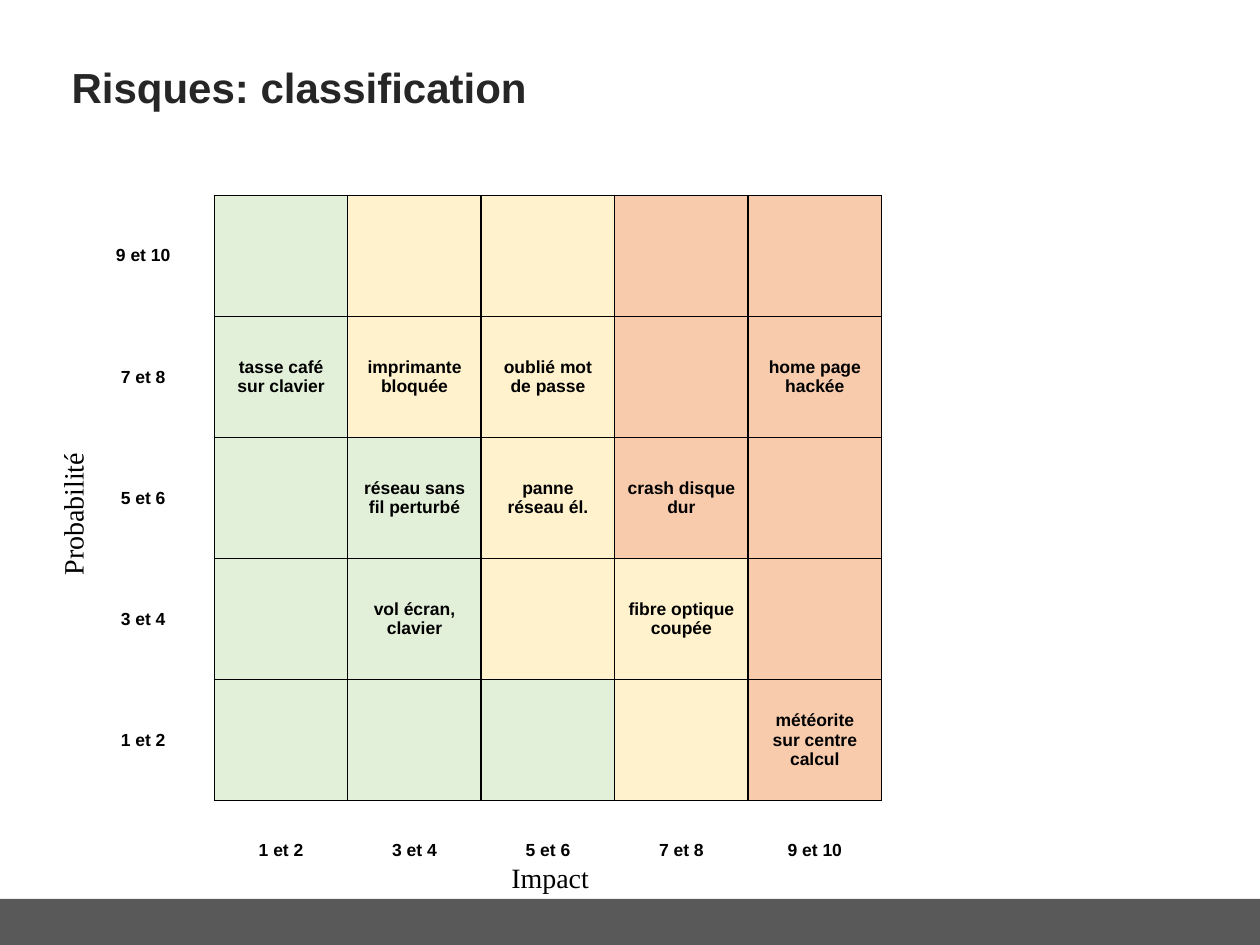
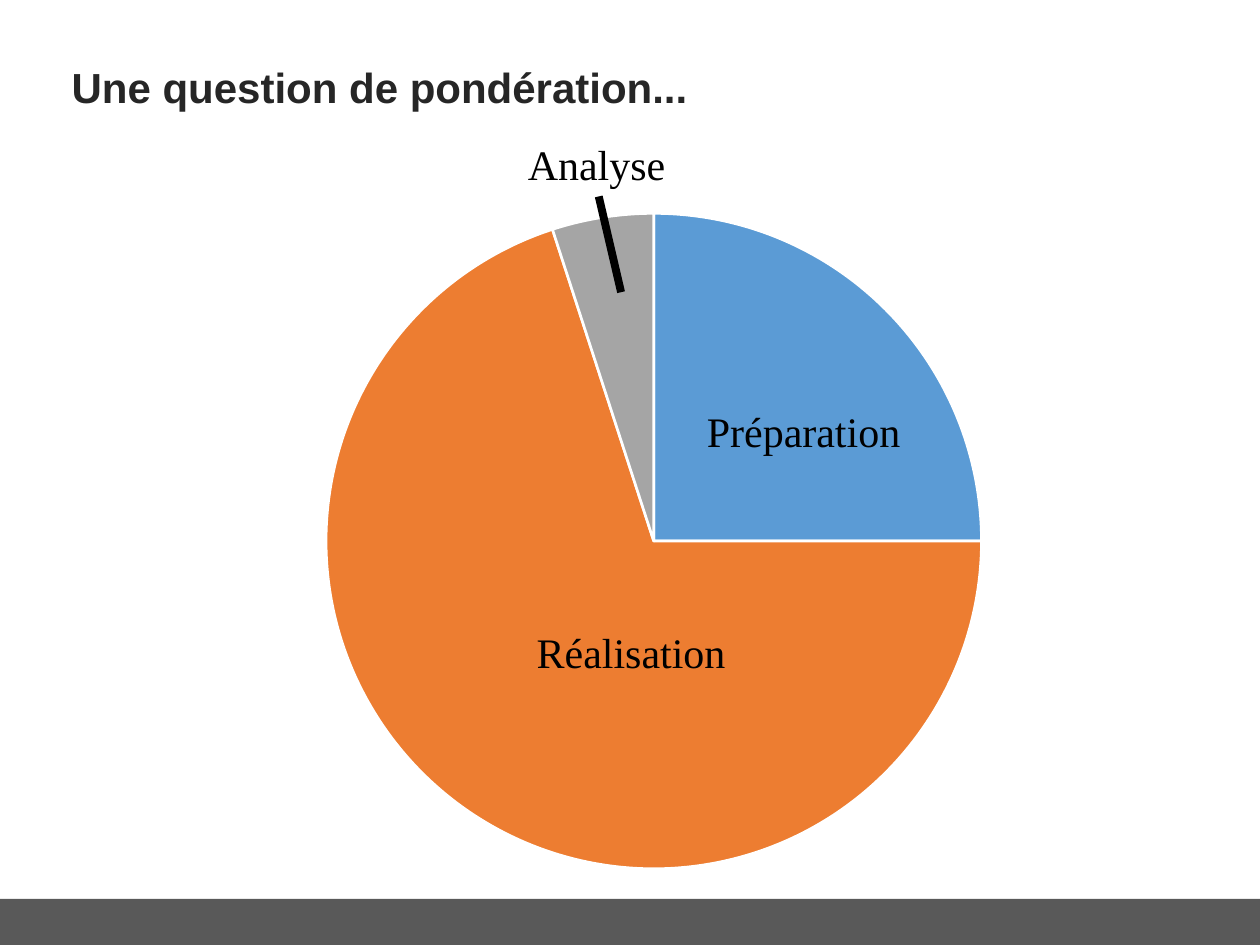
from lxml.etree import SubElement
from pptx import Presentation
from pptx.chart.data import CategoryChartData
from pptx.dml.color import RGBColor
from pptx.enum.chart import XL_CHART_TYPE as ChartType
from pptx.enum.shapes import MSO_CONNECTOR as Connector, MSO_SHAPE as Shape
from pptx.enum.text import MSO_ANCHOR as Anchor, MSO_AUTO_SIZE as AutoSize, PP_ALIGN as Align
from pptx.oxml import parse_xml
from pptx.oxml.ns import nsdecls, qn
from pptx.util import Cm, Pt

BLACK = RGBColor(0x00, 0x00, 0x00)
WHITE = RGBColor(0xFF, 0xFF, 0xFF)
TITLE = RGBColor(0x26, 0x26, 0x26)
BAND = RGBColor(0x59, 0x59, 0x59)
GREEN = RGBColor(0xE2, 0xF0, 0xD9)
YELLOW = RGBColor(0xFF, 0xF2, 0xCC)
RED = RGBColor(0xF8, 0xCB, 0xAD)
BLUE = RGBColor(0x5B, 0x9B, 0xD5)
ORANGE = RGBColor(0xED, 0x7D, 0x31)
GREY = RGBColor(0xA5, 0xA5, 0xA5)
SANS, SERIF = "Arial", "Times New Roman"
PLAIN_TABLE = "{2D5ABB26-0587-4C30-8999-92F81FD0307C}"

LEVELS = ["1 et 2", "3 et 4", "5 et 6", "7 et 8", "9 et 10"]
SEVERITY = {"G": GREEN, "Y": YELLOW, "R": RED}
RISK_ZONES = ["GYYRR", "GYYRR", "GGYRR", "GGYYR", "GGGYR"]
RISKS = {
    (1, 0): "tasse café sur clavier",
    (1, 1): "imprimante bloquée",
    (1, 2): "oublié mot de passe",
    (1, 4): "home page hackée",
    (2, 1): "réseau sans fil perturbé",
    (2, 2): "panne réseau él.",
    (2, 3): "crash disque dur",
    (3, 1): "vol écran, clavier",
    (3, 3): "fibre optique coupée",
    (4, 4): "météorite sur centre calcul",
}
AXIS_LABELS = [
    ("Impact", 10.06, 17.22, 2.08, 0),
    ("Probabilité", -0.03, 9.88, 3.0, 270),
]

SLICES = [(25, BLUE), (70, ORANGE), (5, GREY)]
SLICE_LABELS = [
    ("Préparation", 14.0, 8.05, 4.45),
    ("Réalisation", 10.57, 12.5, 4.34),
    ("Analyse", 10.39, 2.67, 3.3),
]
CHART_W, CHART_H, PIE_D = 19.02, 13.94, 13.22


def add_run(p, text, size, font, color=BLACK, bold=False):
    r = p.add_run()
    r.text = text
    r.font.size, r.font.name, r.font.bold = Pt(size), font, bold
    r.font.color.rgb = color


def add_slide(prs, title):
    s = prs.slides.add_slide(prs.slide_layouts[5])
    band = s.shapes.add_shape(Shape.RECTANGLE, 0, Cm(18.12), prs.slide_width, Cm(0.93))
    band.shadow.inherit = False
    band.fill.solid()
    band.fill.fore_color.rgb = BAND
    band.line.fill.background()
    sp = s.shapes.title
    sp.left, sp.top, sp.width, sp.height = Cm(1.19), Cm(1.04), Cm(21.51), Cm(1.42)
    tf = sp.text_frame
    tf.vertical_anchor = Anchor.MIDDLE
    tf.auto_size = AutoSize.NONE
    p = tf.paragraphs[0]
    p.alignment = Align.LEFT
    add_run(p, title, 24, SANS, TITLE, True)
    return s


def add_label(s, text, left, top, width, height, size, rotation=0):
    sp = s.shapes.add_textbox(Cm(left), Cm(top), Cm(width), Cm(height))
    sp.rotation = rotation
    tf = sp.text_frame
    tf.word_wrap = False
    tf.auto_size = AutoSize.SHAPE_TO_FIT_TEXT
    add_run(tf.paragraphs[0], text, size, SERIF)


def set_borders(cell, sides):
    tc_pr = cell._tc.get_or_add_tcPr()
    for side in sides:
        ln = SubElement(tc_pr, qn(f"a:ln{side}"), w=str(Pt(1)))
        fill = SubElement(ln, qn("a:solidFill"))
        SubElement(fill, qn("a:srgbClr"), val=str(BLACK))


def fill_cell(cell, text, borders="", color=None, anchor=Anchor.MIDDLE):
    set_borders(cell, borders)
    if color is None:
        cell.fill.background()
    else:
        cell.fill.solid()
        cell.fill.fore_color.rgb = color
    cell.vertical_anchor = anchor
    if text:
        p = cell.text_frame.paragraphs[0]
        p.alignment = Align.CENTER
        add_run(p, text, 10, SANS, bold=True)


def add_risk_matrix(s):
    n = len(LEVELS)
    widths = [2.87] + [2.69] * n
    heights = [2.44] * n + [1.32]
    frame = s.shapes.add_table(n + 1, n + 1, Cm(1.45), Cm(3.94),
                               Cm(sum(widths)), Cm(sum(heights)))
    table = frame.table
    table.first_row = table.horz_banding = False
    table._tbl.tblPr.find(qn("a:tableStyleId")).text = PLAIN_TABLE
    for col, width in zip(table.columns, widths):
        col.width = Cm(width)
    for row, height in zip(table.rows, heights):
        row.height = Cm(height)
    for i, zones in enumerate(RISK_ZONES):
        fill_cell(table.cell(i, 0), LEVELS[n - 1 - i], "R")
        fill_cell(table.cell(n, i + 1), LEVELS[i], "T", anchor=Anchor.BOTTOM)
        for j, zone in enumerate(zones):
            fill_cell(table.cell(i, j + 1), RISKS.get((i, j)), "LRTB", SEVERITY[zone])
    fill_cell(table.cell(n, 0), None)


def add_pie(s):
    data = CategoryChartData()
    data.categories = [str(i + 1) for i in range(len(SLICES))]
    data.add_series("Series 1", [value for value, _ in SLICES])
    chart = s.shapes.add_chart(ChartType.PIE, Cm(3.68), Cm(3.94),
                               Cm(CHART_W), Cm(CHART_H), data).chart
    chart.has_title = chart.has_legend = False
    chart.font.size, chart.font.name = Pt(10), SANS
    chart.font.color.rgb = BLACK
    plot = chart.plots[0]
    plot.vary_by_categories = True
    for i, (_, color) in enumerate(SLICES):
        fmt = plot.series[0].points[i].format
        fmt.fill.solid()
        fmt.fill.fore_color.rgb = color
        fmt.line.color.rgb = WHITE
        fmt.line.width = Pt(1.5)
    w, h = PIE_D / CHART_W, PIE_D / CHART_H
    area = chart._chartSpace.chart.plotArea
    for old in area.findall(qn("c:layout")):
        area.remove(old)
    area.insert(0, parse_xml(
        f'<c:layout {nsdecls("c")}><c:manualLayout><c:layoutTarget val="inner"/>'
        '<c:xMode val="edge"/><c:yMode val="edge"/>'
        f'<c:x val="{(1 - w) / 2:.3f}"/><c:y val="{(1 - h) / 2:.3f}"/>'
        f'<c:w val="{w:.3f}"/><c:h val="{h:.3f}"/></c:manualLayout></c:layout>'))


def add_pointer(s):
    line = s.shapes.add_connector(Connector.STRAIGHT, Cm(12.07), Cm(3.96), Cm(12.52), Cm(5.89))
    line.line.color.rgb = BLACK
    line.line.width = Pt(4.5)
    SubElement(line._element.spPr, qn("a:effectLst"))


def main():
    prs = Presentation()
    prs.slide_width, prs.slide_height = Cm(25.4), Cm(19.05)

    s = add_slide(prs, "Risques: classification")
    for text, left, top, width, rotation in AXIS_LABELS:
        add_label(s, text, left, top, width, 0.94, 16, rotation)
    add_risk_matrix(s)

    s = add_slide(prs, "Une question de pondération...")
    add_pie(s)
    for text, left, top, width in SLICE_LABELS:
        add_label(s, text, left, top, width, 1.27, 24)
    add_pointer(s)

    prs.save("out.pptx")


if __name__ == "__main__":
    main()
